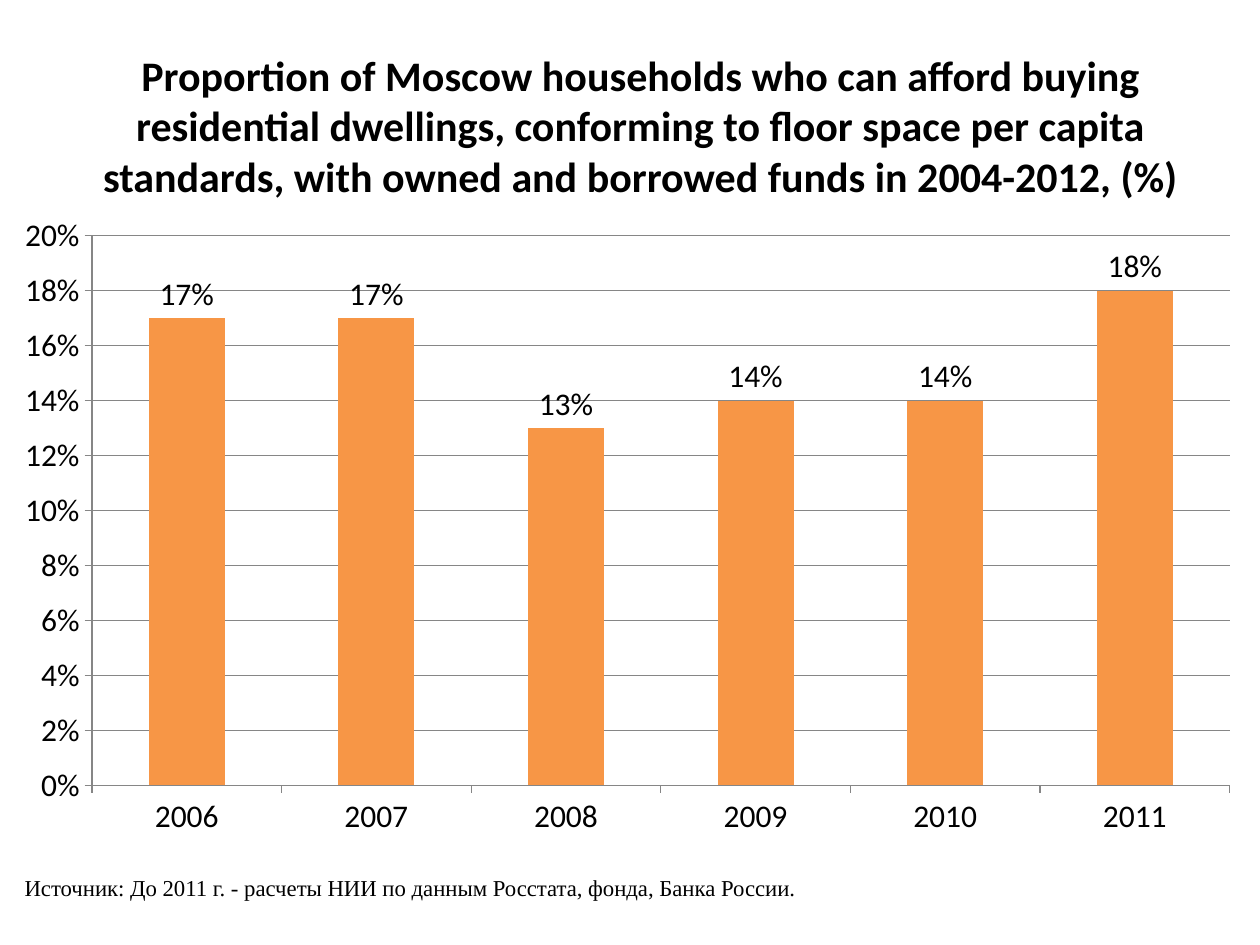
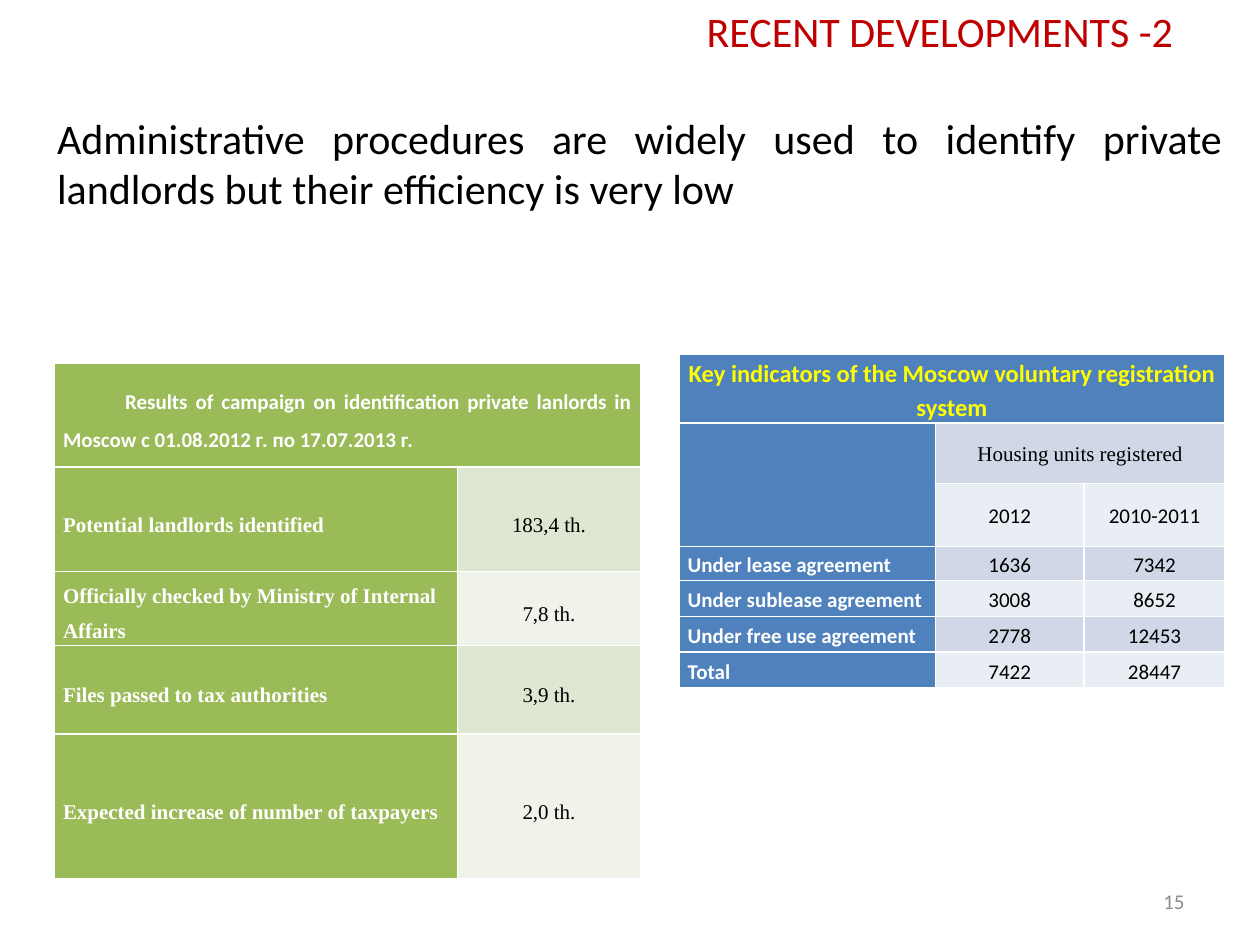
"""Build two slides on Moscow housing affordability and rental registration."""
from dataclasses import dataclass

from pptx import Presentation
from pptx.chart.data import CategoryChartData
from pptx.dml.color import RGBColor
from pptx.enum.chart import XL_CHART_TYPE, XL_LABEL_POSITION, XL_TICK_MARK
from pptx.enum.text import MSO_ANCHOR, MSO_AUTO_SIZE, PP_ALIGN
from pptx.presentation import Presentation as Deck
from pptx.shapes.autoshape import Shape
from pptx.slide import Slide
from pptx.table import _Cell
from pptx.text.text import TextFrame, _Paragraph
from pptx.util import Pt


@dataclass(frozen=True)
class Theme:
    """Colours, fonts and type sizes of the deck."""

    sans: str = "Calibri"
    serif: str = "Times New Roman"
    black: str = "000000"
    white: str = "FFFFFF"
    red: str = "C00000"
    yellow: str = "FFFF00"
    gray: str = "8C8C8C"
    grid: str = "868686"
    orange: str = "F79646"
    blue: str = "4F81BD"
    blue_bands: tuple[str, str] = ("D0D8E8", "E9EDF4")
    green: str = "9BBB59"
    green_bands: tuple[str, str] = ("DEE7D1", "EFF3EA")
    heading: float = 24
    chart: float = 18
    table_heading: float = 14
    source: float = 13
    small: float = 12


THEME = Theme()


@dataclass(frozen=True)
class Frame:
    """Position and size in points."""

    left: float
    top: float
    width: float
    height: float

    def lengths(self) -> tuple[Pt, Pt, Pt, Pt]:
        """Return the four lengths in the order python-pptx expects."""
        return Pt(self.left), Pt(self.top), Pt(self.width), Pt(self.height)


@dataclass(frozen=True)
class TextStyle:
    """Character and paragraph format."""

    size: float = THEME.small
    color: str = THEME.black
    font: str = THEME.sans
    bold: bool = False
    align: PP_ALIGN = PP_ALIGN.LEFT
    line: float | None = None
    before: float = 0
    after: float = 0
    indent: float = 0


@dataclass(frozen=True)
class TableCell:
    """Text, fill and span of one table cell."""

    row: int
    column: int
    text: str
    style: TextStyle
    fill: str
    rows: int = 1
    columns: int = 1


@dataclass(frozen=True)
class TableDesign:
    """Geometry and cells of one table."""

    left: float
    top: float
    columns: tuple[float, ...]
    rows: tuple[float, ...]
    cells: list[TableCell]


def style_paragraph(para: _Paragraph, style: TextStyle) -> None:
    """Apply a text style to a paragraph."""
    para.alignment = style.align
    para.space_before, para.space_after = Pt(style.before), Pt(style.after)
    if style.line:
        para.line_spacing = style.line
    if style.indent:
        para._p.get_or_add_pPr().set("indent", str(Pt(style.indent)))
    para.font.name, para.font.size, para.font.bold = style.font, Pt(style.size), style.bold
    para.font.color.rgb = RGBColor.from_string(style.color)


def fill_text(frame: TextFrame, text: str, style: TextStyle, anchor: MSO_ANCHOR) -> None:
    """Write one styled paragraph into a text frame."""
    frame.word_wrap = True
    frame.auto_size = MSO_AUTO_SIZE.NONE
    frame.vertical_anchor = anchor
    frame.text = text
    style_paragraph(frame.paragraphs[0], style)


def add_text(slide: Slide, frame: Frame, text: str, style: TextStyle,
             anchor: MSO_ANCHOR = MSO_ANCHOR.TOP) -> Shape:
    """Add a wrapped text box."""
    box = slide.shapes.add_textbox(*frame.lengths())
    fill_text(box.text_frame, text, style, anchor)
    return box


def add_titled_slide(deck: Deck, frame: Frame, text: str, style: TextStyle) -> Slide:
    """Add a title-only slide with its title placed and formatted."""
    slide = deck.slides.add_slide(deck.slide_layouts.get_by_name("Title Only"))
    title = slide.shapes.title
    title.left, title.top, title.width, title.height = frame.lengths()
    fill_text(title.text_frame, text, style, MSO_ANCHOR.MIDDLE)
    return slide


def format_cell(cell: _Cell, content: TableCell) -> None:
    """Fill one table cell and set its text."""
    cell.margin_left = cell.margin_right = Pt(5)
    cell.margin_top = cell.margin_bottom = Pt(0)
    cell.vertical_anchor = MSO_ANCHOR.MIDDLE
    cell.fill.solid()
    cell.fill.fore_color.rgb = RGBColor.from_string(content.fill)
    cell.text = content.text
    style_paragraph(cell.text_frame.paragraphs[0], content.style)


def add_table(slide: Slide, design: TableDesign) -> None:
    """Draw a table from its design."""
    frame = Frame(design.left, design.top, sum(design.columns), sum(design.rows))
    table = slide.shapes.add_table(
        len(design.rows), len(design.columns), *frame.lengths()).table
    table.horz_banding = False
    for column, width in zip(table.columns, design.columns):
        column.width = Pt(width)
    for row, height in zip(table.rows, design.rows):
        row.height = Pt(height)
    for content in design.cells:
        cell = table.cell(content.row, content.column)
        if content.rows > 1 or content.columns > 1:
            cell.merge(table.cell(content.row + content.rows - 1,
                                  content.column + content.columns - 1))
        format_cell(cell, content)


def body_cells(records: list[tuple[str, ...]], first_row: int, label: TextStyle,
               value: TextStyle, label_fill: str, bands: tuple[str, str]) -> list[TableCell]:
    """Turn records into a label column and banded value columns."""
    return [
        TableCell(row, column, text, value if column else label,
                  bands[(row - 1) % 2] if column else label_fill)
        for row, record in enumerate(records, first_row)
        for column, text in enumerate(record)
    ]


def campaign_table() -> TableDesign:
    """Describe the results of the landlord identification campaign."""
    heading = TextStyle(color=THEME.white, bold=True, align=PP_ALIGN.JUSTIFY,
                        line=1.5, before=6, after=6, indent=35.5)
    label = TextStyle(color=THEME.white, font=THEME.serif, bold=True,
                      line=1.5, before=12, after=12)
    value = TextStyle(font=THEME.serif, align=PP_ALIGN.CENTER, line=1.5, before=12, after=12)
    records = [
        ("Potential landlords identified", "183,4 th."),
        ("Officially checked by Ministry of Internal Affairs", "7,8 th."),
        ("Files passed to tax authorities", "3,9 th."),
        ("Expected increase of number of taxpayers", "2,0 th."),
    ]
    title = "Results of campaign on identification private lanlords in Moscow с 01.08.2012 г. по 17.07.2013 г."
    cells = [TableCell(0, 0, title, heading, THEME.green, columns=2)]
    cells += body_cells(records, 1, label, value, THEME.green, THEME.green_bands)
    return TableDesign(31, 207.5, (230.5, 104.5), (59.5, 59.5, 42.5, 50.5, 82.5), cells)


def registration_table() -> TableDesign:
    """Describe the indicators of the voluntary registration system."""
    heading = TextStyle(size=THEME.table_heading, color=THEME.yellow, bold=True,
                        align=PP_ALIGN.CENTER, line=1.15)
    units = TextStyle(font=THEME.serif, align=PP_ALIGN.CENTER, line=1.15)
    label = TextStyle(color=THEME.white, bold=True, line=1.15)
    value = TextStyle(align=PP_ALIGN.CENTER, line=1.15)
    light, pale = THEME.blue_bands
    records = [
        ("Under lease agreement", "1636", "7342"),
        ("Under sublease agreement", "3008", "8652"),
        ("Under free use agreement", "2778", "12453"),
        ("Total", "7422", "28447"),
    ]
    cells = [
        TableCell(0, 0, "Key indicators of the Moscow voluntary registration system",
                  heading, THEME.blue, columns=3),
        TableCell(1, 0, "", label, THEME.blue, rows=2),
        TableCell(1, 1, "Housing units registered", units, light, columns=2),
        TableCell(2, 1, "2012", value, pale),
        TableCell(2, 2, "2010-2011", value, pale),
    ]
    cells += body_cells(records, 3, label, value, THEME.blue, THEME.blue_bands)
    return TableDesign(388, 202.5, (146.5, 85, 80.5),
                       (34.5, 34.5, 36, 19.5, 20.5, 20.5, 20.5), cells)


def add_affordability_chart(slide: Slide, frame: Frame) -> None:
    """Add the column chart of households able to buy a dwelling."""
    data = CategoryChartData(number_format="0%")
    data.categories = [str(year) for year in range(2006, 2012)]
    data.add_series("Series 1", (0.17, 0.17, 0.13, 0.14, 0.14, 0.18))
    chart = slide.shapes.add_chart(
        XL_CHART_TYPE.COLUMN_CLUSTERED, *frame.lengths(), data).chart
    chart.has_legend = chart.has_title = False
    chart.font.name, chart.font.size = THEME.sans, Pt(THEME.chart)
    chart.font.color.rgb = RGBColor.from_string(THEME.black)

    values = chart.value_axis
    values.minimum_scale, values.maximum_scale, values.major_unit = 0, 0.2, 0.02
    values.tick_labels.number_format = "0%"
    values.tick_labels.number_format_is_linked = False
    for axis in (chart.category_axis, values):
        axis.major_tick_mark = XL_TICK_MARK.OUTSIDE
    for line in (chart.category_axis.format.line, values.format.line,
                 values.major_gridlines.format.line):
        line.color.rgb = RGBColor.from_string(THEME.grid)
        line.width = Pt(0.75)

    plot = chart.plots[0]
    plot.gap_width = 150
    plot.vary_by_categories = False
    fill = plot.series[0].format.fill
    fill.solid()
    fill.fore_color.rgb = RGBColor.from_string(THEME.orange)
    plot.has_data_labels = True
    labels = plot.data_labels
    labels.show_value = True
    labels.position = XL_LABEL_POSITION.OUTSIDE_END
    labels.number_format = "0%"
    labels.number_format_is_linked = False


def build_affordability_slide(deck: Deck) -> None:
    """Build the slide on household affordability."""
    slide = add_titled_slide(
        deck, Frame(24, 14.5, 684, 114),
        "Proportion of Moscow households who can afford buying residential dwellings, "
        "conforming to floor space per capita standards, with owned and borrowed funds "
        "in 2004-2012, (%)",
        TextStyle(size=THEME.heading, bold=True, align=PP_ALIGN.CENTER))
    add_text(slide, Frame(7, 495.5, 698, 44.5),
             "Источник: До 2011 г. - расчеты НИИ по данным Росстата, фонда, Банка России.",
             TextStyle(size=THEME.source, font=THEME.serif))
    add_affordability_chart(slide, Frame(0, 116.5, 717, 368.5))


def build_registration_slide(deck: Deck) -> None:
    """Build the slide on identifying private landlords."""
    slide = add_titled_slide(
        deck, Frame(189.5, -13.5, 488, 62.5), "RECENT DEVELOPMENTS -2",
        TextStyle(size=THEME.heading, color=THEME.red, align=PP_ALIGN.RIGHT))
    add_text(slide, Frame(25.5, 60.5, 680, 442),
             "Administrative procedures are widely used to identify private landlords "
             "but their efficiency is very low",
             TextStyle(size=THEME.heading, align=PP_ALIGN.JUSTIFY, before=4.8))
    add_text(slide, Frame(516, 500.5, 168, 29), "15",
             TextStyle(color=THEME.gray, align=PP_ALIGN.RIGHT), MSO_ANCHOR.MIDDLE)
    add_table(slide, registration_table())
    add_table(slide, campaign_table())


def main() -> None:
    """Create and save the deck."""
    deck = Presentation()
    deck.slide_width, deck.slide_height = Pt(720), Pt(540)
    build_affordability_slide(deck)
    build_registration_slide(deck)
    deck.save("out.pptx")


if __name__ == "__main__":
    main()
